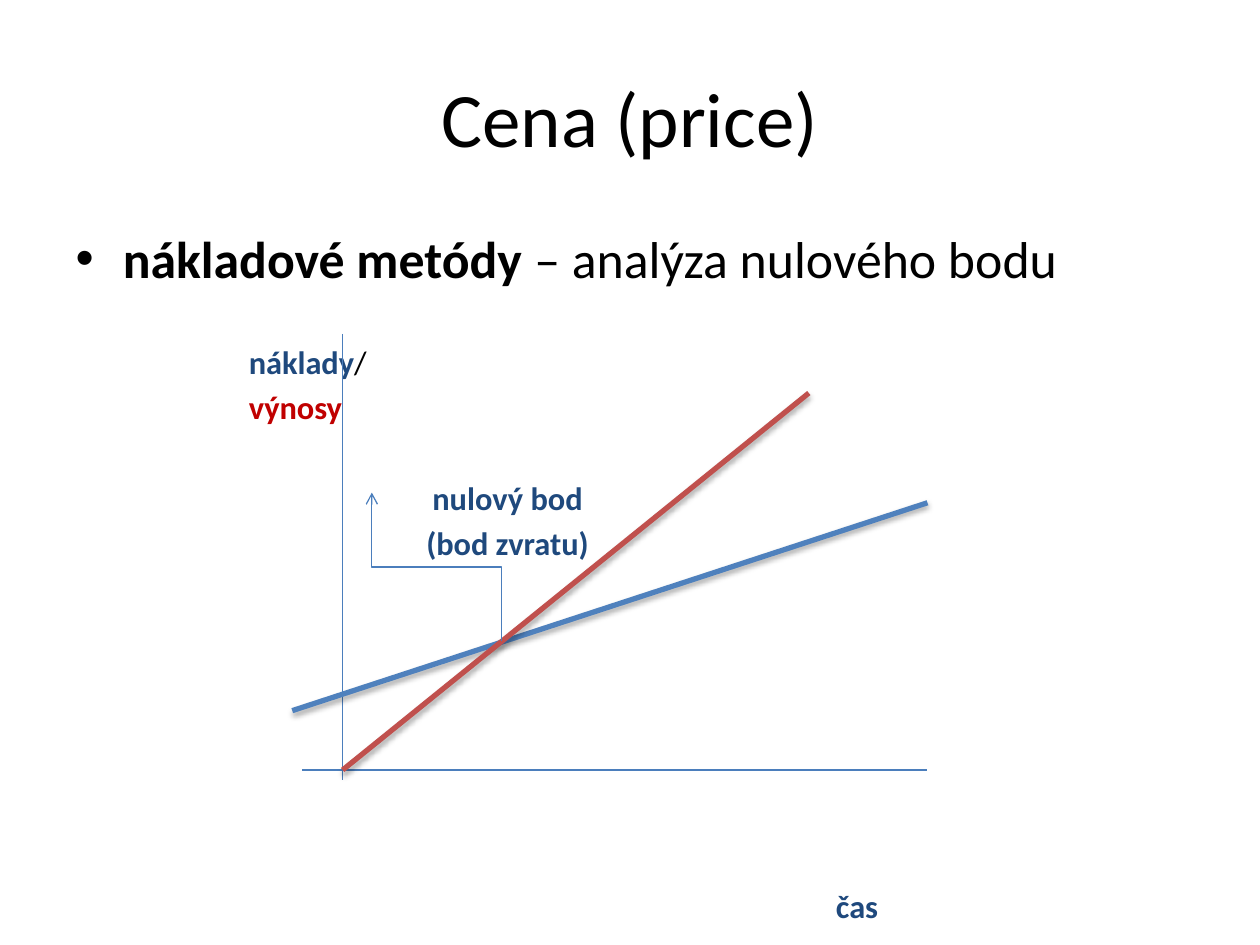
from lxml.etree import SubElement
from pptx import Presentation
from pptx.dml.color import RGBColor
from pptx.enum.shapes import MSO_CONNECTOR as Connector
from pptx.enum.text import MSO_ANCHOR as Anchor, PP_ALIGN as Align
from pptx.oxml.ns import qn
from pptx.util import Pt

THEME = {
    "font": "Calibri",
    "sizes": {"title": 44, "body": 29.6, "label": 18.5},
    "colors": {"black": "000000", "navy": "1F497D", "crimson": "C00000",
               "axis": "4B7EBC", "cost": "4F81BD", "revenue": "C0504D"},
    "widths": {"thin": 0.75, "thick": 3},
    "label_gap": 3.3,
    "bullet_indent": 27,
}

TEXTS = [
    {"box": (36, 21.6, 648, 90), "size": "title", "align": Align.CENTER, "anchor": Anchor.MIDDLE,
     "lines": [[("Cena (price)", "black", False)]]},
    {"box": (43.2, 129.6, 633.6, 37), "size": "body", "bullet": True,
     "lines": [[("nákladové metódy\u00a0", "black", True), ("– analýza nulového bodu", "black", False)]]},
    {"box": (142.2, 195.7, 100, 50), "size": "label",
     "lines": [[("náklady", "navy", True), ("/", "black", False)], [("výnosy", "crimson", True)]]},
    {"box": (230, 273.4, 120, 50), "size": "label", "align": Align.CENTER,
     "lines": [[("nulový bod", "navy", True)], [("(bod zvratu)", "navy", True)]]},
    {"box": (477.7, 506.5, 60, 24), "size": "label",
     "lines": [[("čas", "navy", True)]]},
]

ORIGIN = (195.8, 440)
LINES = [
    {"start": (ORIGIN[0], 190.8), "end": (ORIGIN[0], 445.7), "color": "axis", "width": "thin"},
    {"start": (172.8, ORIGIN[1]), "end": (530, ORIGIN[1]), "color": "axis", "width": "thin"},
    {"start": (167, 406.1), "end": (530, 287.3), "color": "cost", "width": "thick"},
    {"start": ORIGIN, "end": (462.2, 224.6), "color": "revenue", "width": "thick"},
]
CALLOUT = {"start": (286.5, 366.5), "end": (212.5, 281.5)}


def set_all(target, values):
    for name, value in values.items():
        setattr(target, name, value)


def add_bullet(paragraph):
    properties = paragraph._p.get_or_add_pPr()
    indent = Pt(THEME["bullet_indent"])
    properties.set("marL", str(indent))
    properties.set("indent", str(-indent))
    SubElement(properties, qn("a:buFont"), typeface="Arial")
    SubElement(properties, qn("a:buChar"), char="•")


def add_text(slide, item):
    frame = slide.shapes.add_textbox(*map(Pt, item["box"])).text_frame
    set_all(frame, {"word_wrap": True, "vertical_anchor": item.get("anchor", Anchor.TOP),
                    "margin_left": 0, "margin_right": 0, "margin_top": 0, "margin_bottom": 0})
    for index, runs in enumerate(item["lines"]):
        paragraph = frame.add_paragraph() if index else frame.paragraphs[0]
        set_all(paragraph, {"alignment": item.get("align", Align.LEFT),
                            "space_before": Pt(THEME["label_gap"] if index else 0)})
        if item.get("bullet"):
            add_bullet(paragraph)
        for text, color, bold in runs:
            run = paragraph.add_run()
            run.text = text
            set_all(run.font, {"name": THEME["font"], "size": Pt(THEME["sizes"][item["size"]]), "bold": bold})
            run.font.color.rgb = RGBColor.from_string(THEME["colors"][color])


def add_line(slide, start, end, color, width, kind=Connector.STRAIGHT):
    connector = slide.shapes.add_connector(kind, *map(Pt, (*start, *end)))
    connector.line.color.rgb = RGBColor.from_string(THEME["colors"][color])
    connector.line.width = Pt(THEME["widths"][width])
    effects = SubElement(connector._element.spPr, qn("a:effectLst"))
    if width == "thick":
        shadow = SubElement(effects, qn("a:outerShdw"), blurRad=str(Pt(3.1)), dist=str(Pt(1.8)),
                            dir="5400000", rotWithShape="0")
        tint = SubElement(shadow, qn("a:srgbClr"), val=THEME["colors"]["black"])
        SubElement(tint, qn("a:alpha"), val="35000")
    return connector


def add_callout(slide, start, end):
    center_x, center_y = (start[0] + end[0]) / 2, (start[1] + end[1]) / 2
    half_run, half_rise = abs(start[1] - end[1]) / 2, abs(start[0] - end[0]) / 2
    connector = add_line(slide, (center_x - half_run, center_y + half_rise),
                         (center_x + half_run, center_y - half_rise), "axis", "thin", Connector.ELBOW)
    connector._element.spPr.find(qn("a:xfrm")).set("rot", str(270 * 60000))
    SubElement(connector.line._get_or_add_ln(), qn("a:tailEnd"), type="arrow")


def main():
    """Build the break-even slide and save it."""
    presentation = Presentation()
    set_all(presentation, {"slide_width": Pt(720), "slide_height": Pt(540)})
    slide = presentation.slides.add_slide(presentation.slide_layouts[6])
    for item in TEXTS:
        add_text(slide, item)
    for line in LINES:
        add_line(slide, **line)
    add_callout(slide, **CALLOUT)
    presentation.save("out.pptx")


if __name__ == "__main__":
    main()
